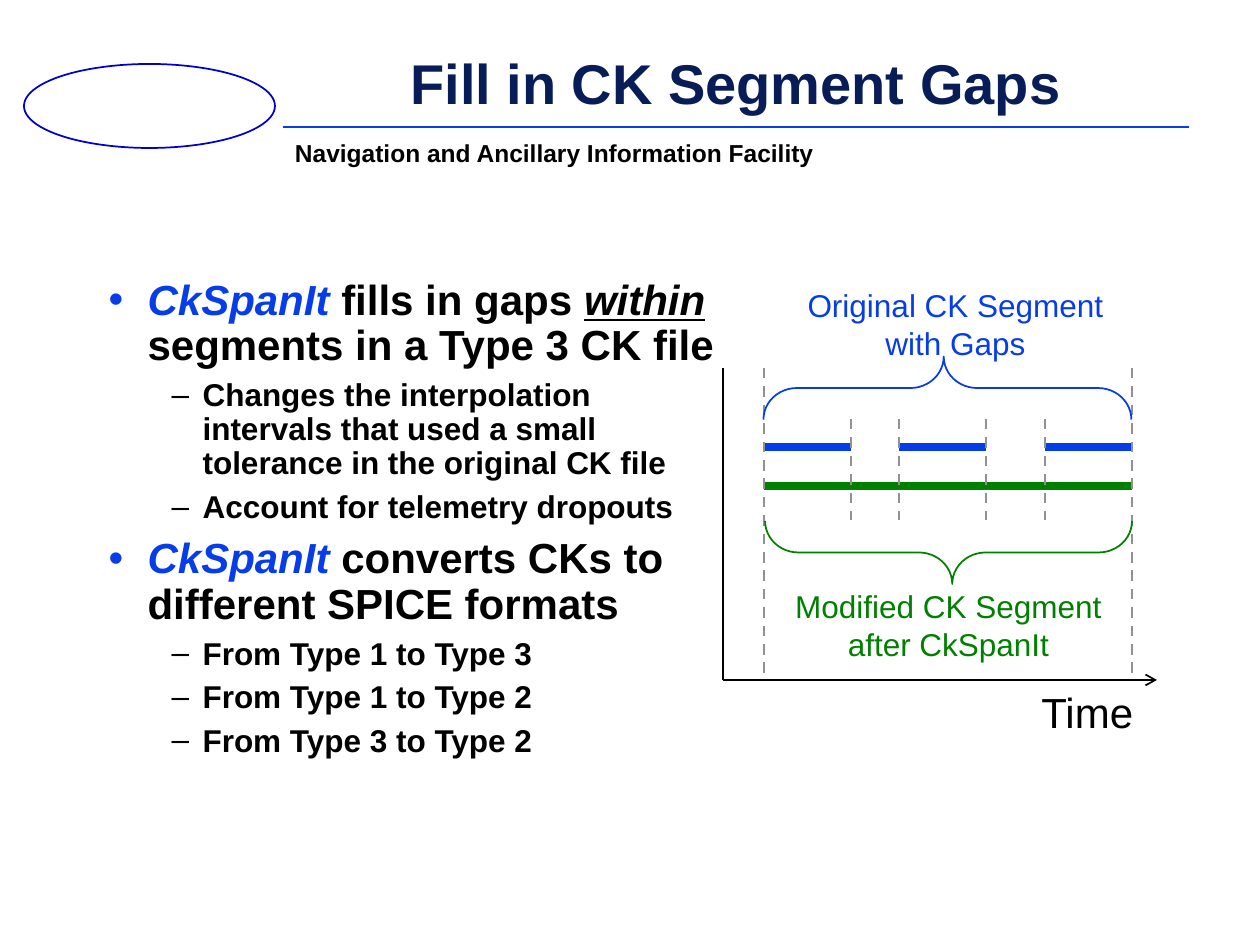
from dataclasses import dataclass
from typing import NamedTuple

from lxml import etree
from pptx import Presentation
from pptx import util as u
from pptx.dml.color import RGBColor
from pptx.enum import dml, shapes, text
from pptx.oxml.ns import qn

SCALE = u.Inches(1) / 126  # EMU per px
FONT = "Arial"
COLORS = {
    "navy": "081D58",
    "blue": "063DE8",
    "orbit": "0000CC",
    "green": "008000",
    "gray": "919191",
    "black": "000000",
}


class Box(NamedTuple):
    left: int
    top: int
    width: int
    height: int


class Span(NamedTuple):
    text: str
    color: str = "black"
    italic: bool = False
    underline: bool = False


class Item(NamedTuple):
    level: int
    spans: list[Span]


class Level(NamedTuple):
    size: int
    margin: int
    hang: int


@dataclass
class Line:
    start: tuple[int, int]
    end: tuple[int, int]
    color: str
    width: float
    dashed: bool = False
    arrow: bool = False


@dataclass
class Label:
    box: Box
    text: str
    color: str
    size: int
    bold: bool = False
    wrap: bool = True
    align: text.PP_ALIGN = text.PP_ALIGN.CENTER


@dataclass
class Brace:
    box: Box
    rotation: int
    color: str


LEVELS = [Level(24, 39, 39), Level(18, 94, 31)]
TOOL = Span("CkSpanIt ", "blue", italic=True)
ITEMS = [
    Item(0, [TOOL, Span("fills in gaps "), Span("within", italic=True, underline=True),
             Span(" segments in a Type 3 CK file")]),
    Item(1, [Span("Changes the interpolation intervals that used a small "
                  "tolerance in the original CK file")]),
    Item(1, [Span("Account for telemetry dropouts")]),
    Item(0, [TOOL, Span("converts CKs to different SPICE formats")]),
    Item(1, [Span("From Type 1 to Type 3")]),
    Item(1, [Span("From Type 1 to Type 2")]),
    Item(1, [Span("From Type 3 to Type 2")]),
]

# Time diagram: segment edges and rows
EDGES = [764, 851, 899, 986, 1045, 1132]
AXIS_X, AXIS_Y, DIAGRAM_TOP = 723, 680, 368
GAPPED_Y, FILLED_Y = 447, 486

AXES = [
    Line((AXIS_X, AXIS_Y), (1157, AXIS_Y), "black", 1, arrow=True),
    Line((AXIS_X, AXIS_Y), (AXIS_X, DIAGRAM_TOP), "black", 1),
]
SEGMENTS = [Line((left, GAPPED_Y), (right, GAPPED_Y), "blue", 5)
            for left, right in zip(EDGES[::2], EDGES[1::2])]
SEGMENTS.append(Line((EDGES[0], FILLED_Y), (EDGES[-1], FILLED_Y), "green", 5))
LIMITS = [Line((x, DIAGRAM_TOP), (x, AXIS_Y), "gray", 1.5, dashed=True)
          for x in (EDGES[0], EDGES[-1])]
GAP_MARKS = [Line((x, 419), (x, 520), "gray", 1.5, dashed=True) for x in EDGES[1:-1]]
BRACES = [
    Brace(Box(916, 204, 63, 368), 270, "blue"),
    Brace(Box(917, 369, 63, 367), 90, "green"),
]
HEADER = Label(Box(286, 134, 541, 34), "Navigation and Ancillary Information Facility",
               "black", 14, bold=True, wrap=False, align=text.PP_ALIGN.LEFT)
LABELS = [
    Label(Box(779, 280, 353, 89), "Original CK Segment with Gaps", "blue", 18),
    Label(Box(765, 581, 367, 89), "Modified CK Segment after CkSpanIt", "green", 18),
    Label(Box(1029, AXIS_Y, 118, 63), "Time", "black", 24, wrap=False,
          align=text.PP_ALIGN.LEFT),
]


def px(value: float) -> u.Emu:
    return u.Emu(round(value * SCALE))


def rgb(name: str) -> RGBColor:
    return RGBColor.from_string(COLORS[name])


def place(shape, box: Box) -> None:
    shape.left, shape.top, shape.width, shape.height = map(px, box)


def style_font(font, size: int, color: str, bold: bool) -> None:
    font.name, font.size, font.bold = FONT, u.Pt(size), bold
    font.color.rgb = rgb(color)


def tighten(frame) -> None:
    frame.margin_left = frame.margin_right = px(9)
    frame.margin_top = frame.margin_bottom = px(4)


def draw_line(page, line: Line) -> None:
    shape = page.shapes.add_connector(
        shapes.MSO_CONNECTOR.STRAIGHT, *map(px, line.start + line.end))
    shape.line.color.rgb = rgb(line.color)
    shape.line.width = u.Pt(line.width)
    if line.dashed:
        shape.line.dash_style = dml.MSO_LINE.DASH
    if line.arrow:
        etree.SubElement(shape.line._get_or_add_ln(), qn("a:tailEnd"), type="arrow")
    etree.SubElement(shape._element.spPr, qn("a:effectLst"))


def draw_outline(page, kind: shapes.MSO_SHAPE, box: Box, color: str):
    shape = page.shapes.add_shape(kind, *map(px, box))
    shape.shadow.inherit = False
    shape.fill.background()
    shape.line.color.rgb = rgb(color)
    shape.line.width = u.Pt(1)
    return shape


def draw_brace(page, brace: Brace) -> None:
    shape = draw_outline(page, shapes.MSO_SHAPE.RIGHT_BRACE, brace.box, brace.color)
    shape.adjustments[0], shape.adjustments[1] = 0.53, 0.49
    shape.rotation = brace.rotation


def draw_label(page, label: Label):
    frame = page.shapes.add_textbox(*map(px, label.box)).text_frame
    frame.word_wrap = label.wrap
    frame.text = label.text
    para = frame.paragraphs[0]
    para.alignment = label.align
    style_font(para.runs[0].font, label.size, label.color, label.bold)
    return frame


def fill_title(title) -> None:
    place(title, Box(399, 53, 674, 68))
    frame = title.text_frame
    frame.text = "Fill in CK Segment Gaps"
    frame.word_wrap = False
    frame.auto_size = text.MSO_AUTO_SIZE.NONE
    tighten(frame)
    para = frame.paragraphs[0]
    para.alignment, para.line_spacing = text.PP_ALIGN.CENTER, 0.87
    style_font(para.runs[0].font, 32, "navy", True)


def fill_body(body) -> None:
    place(body, Box(96, 273, 633, 566))
    frame = body.text_frame
    frame.auto_size = text.MSO_AUTO_SIZE.NONE
    for index, item in enumerate(ITEMS):
        para = frame.add_paragraph() if index else frame.paragraphs[0]
        level = LEVELS[item.level]
        para.level, para.line_spacing = item.level, 0.9
        para.space_before = u.Pt(0.3 * level.size if index else 0)
        properties = para._p.get_or_add_pPr()
        properties.set("marL", str(px(level.margin)))
        properties.set("indent", str(-px(level.hang)))
        for span in item.spans:
            run = para.add_run()
            run.text = span.text
            style_font(run.font, level.size, span.color, True)
            run.font.italic, run.font.underline = span.italic, span.underline


def main() -> None:
    deck = Presentation()
    deck.slide_width, deck.slide_height = px(1260), px(945)
    page = deck.slides.add_slide(deck.slide_layouts[1])

    # Header
    draw_outline(page, shapes.MSO_SHAPE.OVAL, Box(24, 64, 251, 84), "orbit")
    draw_line(page, Line((283, 127), (1189, 127), "blue", 1.5))
    tighten(draw_label(page, HEADER))
    fill_title(page.shapes.title)

    # Bullet list
    fill_body(page.placeholders[1])

    # Time diagram
    for line in AXES + SEGMENTS + LIMITS + GAP_MARKS:
        draw_line(page, line)
    for brace in BRACES:
        draw_brace(page, brace)
    for label in LABELS:
        draw_label(page, label)
    deck.save("out.pptx")


if __name__ == "__main__":
    main()
